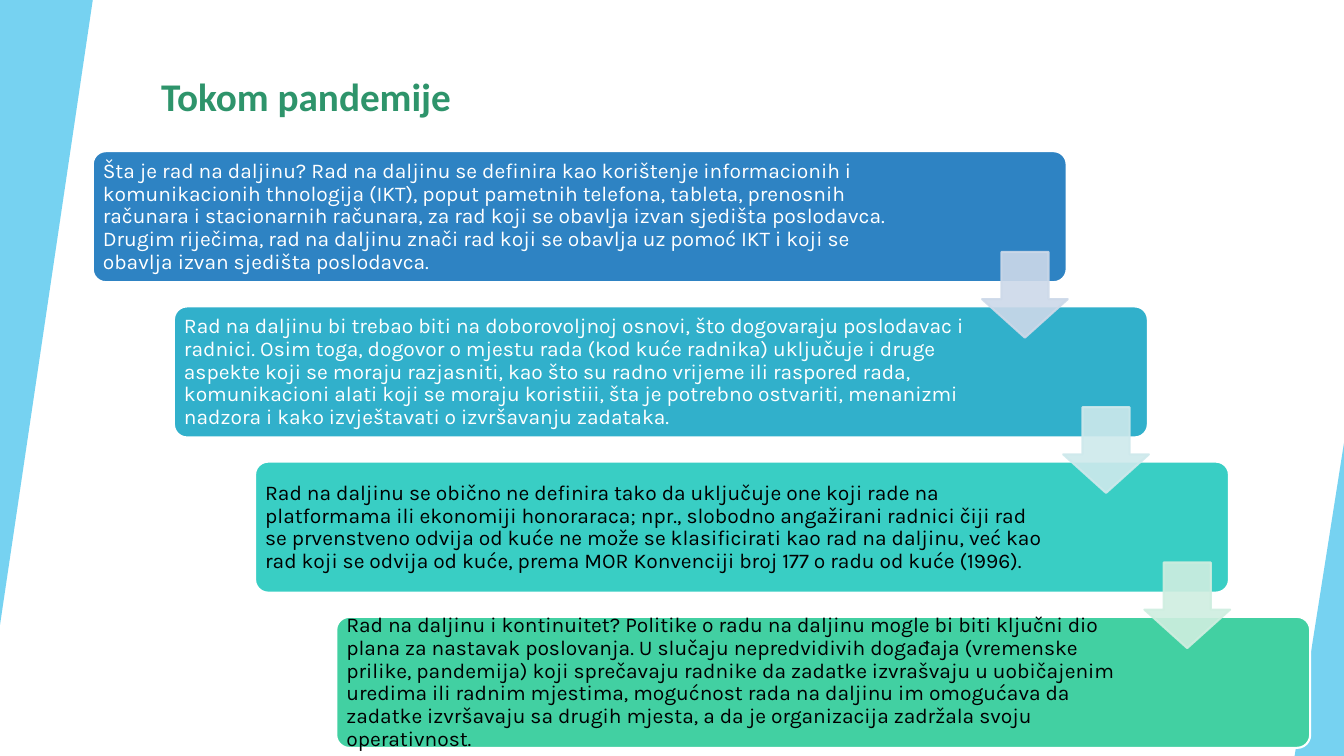
from lxml import etree
from pptx import Presentation, util as u
from pptx.dml.color import RGBColor
from pptx.enum import shapes, text
from pptx.oxml.ns import qn

WIDTH, HEIGHT = 13.33, 7.5
STEP_X, STEP_Y = 0.805, 1.54
BOX_LEFT, BOX_TOP, BOX_WIDTH, BOX_HEIGHT = 0.92, 1.5, 9.66, 1.3
ARROW_LEFT, ARROW_TOP, ARROW_SIZE = 9.74, 2.5, 0.85
PADDING = 0.06

steps = [
    ("2E83C3", "FFFFFF", 8.15, "Šta je rad na daljinu? Rad na daljinu se definira kao korištenje "
     "informacionih i komunikacionih thnologija (IKT), poput pametnih telefona, tableta, prenosnih "
     "računara i stacionarnih računara, za rad koji se obavlja izvan sjedišta poslodavca. Drugim "
     "riječima, rad na daljinu znači rad koji se obavlja uz pomoć IKT i koji se obavlja izvan "
     "sjedišta poslodavca."),
    ("31B0CB", "FFFFFF", 7.93, "Rad na daljinu bi trebao biti na doborovoljnoj osnovi, što dogovaraju "
     "poslodavac i radnici. Osim toga, dogovor o mjestu rada (kod kuće radnika) uključuje i druge "
     "aspekte koji se moraju razjasniti, kao što su radno vrijeme ili raspored rada, komunikacioni "
     "alati koji se moraju koristiii, šta je potrebno ostvariti, menanizmi nadzora i kako "
     "izvještavati o izvršavanju zadataka."),
    ("39CEC4", "000000", 7.93, "Rad na daljinu se obično ne definira tako da uključuje one koji rade na "
     "platformama ili ekonomiji honoraraca; npr., slobodno angažirani radnici čiji rad se prvenstveno "
     "odvija od kuće ne može se klasificirati kao rad na daljinu, već kao rad koji se odvija od kuće, "
     "prema MOR Konvenciji broj 177 o radu od kuće (1996)."),
    ("42D0A2", "000000", 7.93, "Rad na daljinu i kontinuitet? Politike o radu na daljinu mogle bi biti "
     "ključni dio plana za nastavak poslovanja. U slučaju nepredvidivih događaja (vremenske prilike, "
     "pandemija) koji sprečavaju radnike da zadatke izvrašvaju u uobičajenim uredima ili radnim "
     "mjestima, mogućnost rada na daljinu im omogućava da zadatke izvršavaju sa drugih mjesta, a da "
     "je organizacija zadržala svoju operativnost."),
]
arrow_colors = ["CDD9E9", "CEE9EC", "CFEEE0"]

presentation = Presentation()
presentation.slide_width, presentation.slide_height = u.Inches(WIDTH), u.Inches(HEIGHT)
slide = presentation.slides.add_slide(presentation.slide_layouts[6])


def add_filled(kind, box, adjustments, color, opacity=100, line=None):
    """Add a preset shape; box is left, top, width, height in inches, opacity in percent."""
    shape = slide.shapes.add_shape(kind, *map(u.Inches, box))
    shape.shadow.inherit = False
    for index, value in enumerate(adjustments):
        shape.adjustments[index] = value
    shape.fill.solid()
    shape.fill.fore_color.rgb = RGBColor.from_string(color)
    if line:
        shape.line.color.rgb = RGBColor.from_string(line)
        shape.line.width = u.Pt(1.5)
    else:
        shape.line.fill.background()
    if opacity < 100:
        for color_element in shape._element.spPr.iter(qn("a:srgbClr")):
            etree.SubElement(color_element, qn("a:alpha"), val=str(opacity * 1000))
    return shape


def add_text(box, words, font_name, size, color, bold=False):
    text_box = slide.shapes.add_textbox(*map(u.Inches, box))
    frame = text_box.text_frame
    frame.word_wrap = True
    frame.text = words
    font = frame.paragraphs[0].runs[0].font
    font.name, font.size, font.bold = font_name, u.Pt(size), bold
    font.color.rgb = RGBColor.from_string(color)
    return frame


add_text((1.5, 0.67, 11.06, 1.2), "Tokom pandemije", "Calibri", 28, "2E946B", bold=True)

triangle = shapes.MSO_SHAPE.ISOSCELES_TRIANGLE
left_wedge = add_filled(triangle, (0, 0, 0.92, 6.2), [1], "5FCBEF", 85)
left_wedge.rotation = 180
add_filled(triangle, (WIDTH - 0.49, HEIGHT - 3.11, 0.49, 3.11), [1], "5FCBEF", 85)

for row, (fill, text_color, text_width, words) in enumerate(steps):
    left, top = BOX_LEFT + row * STEP_X, BOX_TOP + row * STEP_Y
    add_filled(shapes.MSO_SHAPE.ROUNDED_RECTANGLE, (left, top, BOX_WIDTH, BOX_HEIGHT), [0.1],
               fill, line="FFFFFF")
    frame = add_text((left + 0.04, top + 0.04, text_width, BOX_HEIGHT - 0.07), words,
                     "Karla", 15, text_color)
    frame.vertical_anchor = text.MSO_ANCHOR.MIDDLE
    frame.margin_left = frame.margin_right = u.Inches(PADDING)
    frame.margin_top = frame.margin_bottom = u.Inches(PADDING)
    frame.paragraphs[0].line_spacing = 0.9

for row, color in enumerate(arrow_colors):
    arrow_box = (ARROW_LEFT + row * STEP_X, ARROW_TOP + row * STEP_Y, ARROW_SIZE, ARROW_SIZE)
    add_filled(shapes.MSO_SHAPE.DOWN_ARROW, arrow_box, [0.55, 0.45], color, 90, line=color)

presentation.save("out.pptx")
